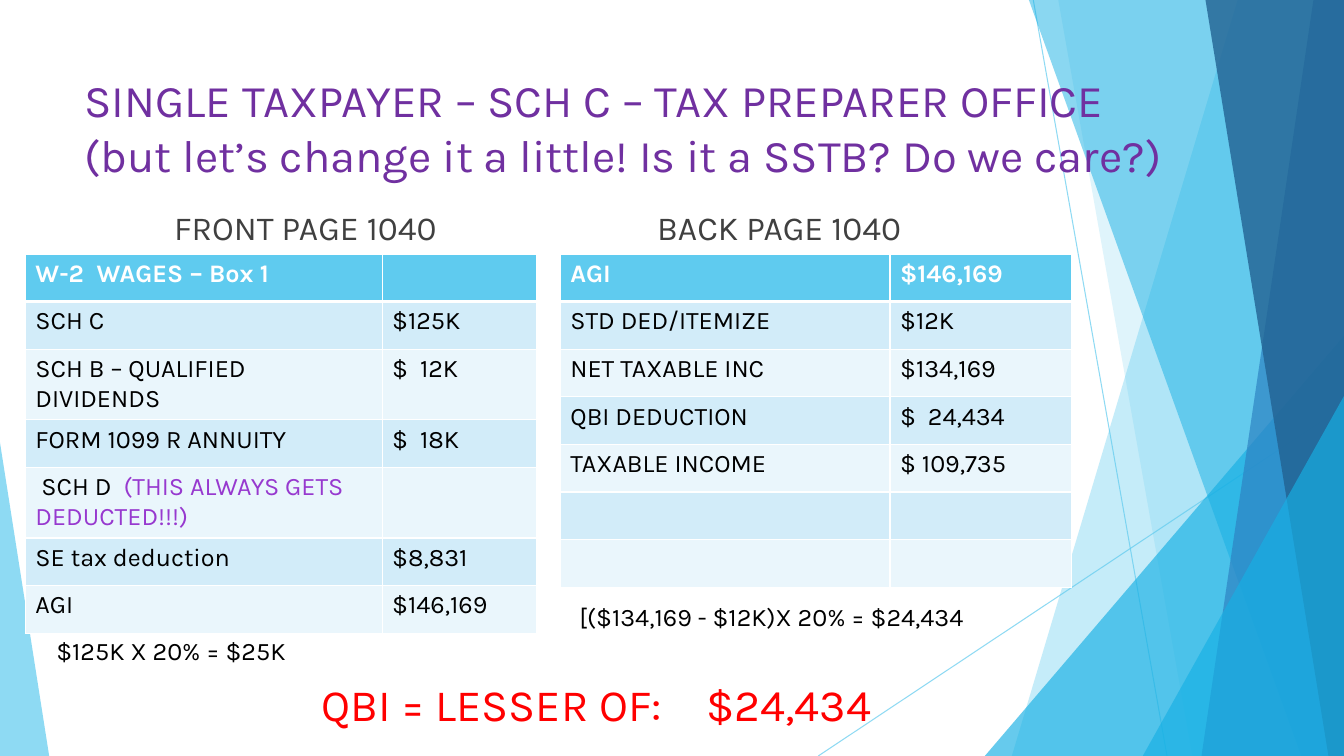
from dataclasses import dataclass

from lxml.etree import SubElement
from pptx import Presentation
from pptx.dml.color import RGBColor as RGB
from pptx.enum.shapes import MSO_CONNECTOR as CONN, MSO_SHAPE as SHAPE
from pptx.enum.text import MSO_ANCHOR as ANCHOR, PP_ALIGN as ALIGN
from pptx.oxml.ns import qn
from pptx.util import Cm, Pt


@dataclass(frozen=True)
class Theme:
    """Colours, font and type sizes of the slide."""
    font: str = "Karla"
    title: float = 32.4
    result: float = 32
    heading: float = 24
    body: float = 18
    purple: str = "7030A0"
    violet: str = "9739CF"
    red: str = "FF0000"
    grey: str = "404040"
    black: str = "000000"
    white: str = "FFFFFF"
    sky: str = "5FCBEF"
    azure: str = "17B0E4"
    blue: str = "2E83C3"
    navy: str = "226292"
    bands: tuple = ("D2ECF9", "EAF6FC")


T = Theme()
W, H = 33.87, 19.05

FRONT = [
    ("W-2  WAGES – Box 1", ""),
    ("SCH C", "$125K"),
    ("SCH B – QUALIFIED DIVIDENDS", "$  12K"),
    ("FORM 1099 R ANNUITY", "$  18K"),
    ((" SCH D  ", "(THIS ALWAYS GETS DEDUCTED!!!)"), ""),
    ("SE tax deduction", "$8,831"),
    ("AGI", "$146,169"),
]
BACK = [
    ("AGI", "$146,169"),
    ("STD DED/ITEMIZE", "$12K"),
    ("NET TAXABLE INC", "$134,169"),
    ("QBI DEDUCTION", "$  24,434"),
    ("TAXABLE INCOME", "$ 109,735"),
    ("", ""),
    ("", ""),
]


def apply(obj, **values):
    """Set each named attribute on an object."""
    for name, value in values.items():
        setattr(obj, name, value)


def add_run(p, text, size, color, bold=False):
    """Add one formatted run to a paragraph."""
    r = p.add_run()
    r.text = text
    apply(r.font, name=T.font, size=Pt(size), bold=bold)
    r.font.color.rgb = RGB.from_string(color)


def add_text(s, box, lines, size, color, frame=None, para=None):
    """Place a wrapped text box and return its paragraph."""
    tf = s.shapes.add_textbox(*map(Cm, box)).text_frame
    apply(tf, word_wrap=True, **(frame or {}))
    p = tf.paragraphs[0]
    apply(p, **(para or {}))
    for i, line in enumerate(lines):
        if i:
            p.add_line_break()
        add_run(p, line, size, color)
    return p


def set_alpha(shape, percent):
    """Make the first solid colour of a shape translucent."""
    color = next(shape._element.spPr.iter(qn("a:srgbClr")))
    SubElement(color, qn("a:alpha")).set("val", str(percent * 1000))


def paint(sp, color, alpha):
    """Give a shape a translucent fill with no line or shadow."""
    sp.shadow.inherit = False
    sp.fill.solid()
    sp.fill.fore_color.rgb = RGB.from_string(color)
    sp.line.fill.background()
    set_alpha(sp, alpha)


def ray(s, start, end):
    """Draw a thin translucent line."""
    c = s.shapes.add_connector(CONN.STRAIGHT, *map(Cm, start + end))
    c.line.color.rgb = RGB.from_string(T.sky)
    c.line.width = Pt(0.75)
    set_alpha(c, 70)
    SubElement(c._element.spPr, qn("a:effectLst"))


def panel(s, box, top_x, bottom_x, color, alpha):
    """Draw a slanted panel that reaches the right edge of the box."""
    x, y, w, h = box
    corners = [(x + top_x, y), (x + w, y), (x + w, y + h), (x + bottom_x, y + h)]
    points = [(Cm(px), Cm(py)) for px, py in corners]
    fb = s.shapes.build_freeform(*points[0])
    fb.add_line_segments(points[1:], close=True)
    paint(fb.convert_to_shape(), color, alpha)


def wedge(s, box, apex, color, alpha):
    """Draw a right triangle filling the box, its apex at 0 or 1."""
    sp = s.shapes.add_shape(SHAPE.ISOSCELES_TRIANGLE, *map(Cm, box))
    sp.adjustments[0] = apex
    paint(sp, color, alpha)


def facets(s, box):
    """Draw the faceted decoration inside the box."""
    x, y, w, h = box

    def corner(dx, dy):
        wedge(s, (x + dx, y + dy, w - dx, h - dy), 1, T.azure, 66)

    ray(s, (x + 26.04, y), (x + 29.41, y + h))
    ray(s, (x + w, y + 10.24), (x + 20.62, y + h))
    panel(s, box, 31.19, 25.5, T.sky, 36)
    panel(s, box, 26.67, 30.05, T.sky, 20)
    corner(24.82, 8.46)
    panel(s, box, 25.93, 32.79, T.azure, 50)
    panel(s, box, 33.1, 30.28, T.blue, 70)
    panel(s, box, 30.38, 33.48, T.navy, 80)
    corner(28.8, 9.98)
    wedge(s, (x, y + 11.15, 1.24, h - 11.15), 0, T.sky, 70)


def format_cell(cell, content, row):
    """Fill one table cell with its text, borders and band colour."""
    header = row == 0
    tcPr = cell._tc.get_or_add_tcPr()
    for side in "LRTB":
        thick = (side == "B" and header) or (side == "T" and row == 1)
        ln = SubElement(tcPr, qn(f"a:ln{side}"), w=str(Pt(3 if thick else 1)))
        SubElement(SubElement(ln, qn("a:solidFill")), qn("a:srgbClr"), val=T.white)
    cell.fill.solid()
    fill = T.sky if header else T.bands[(row - 1) % 2]
    cell.fill.fore_color.rgb = RGB.from_string(fill)
    p = cell.text_frame.paragraphs[0]
    p.font.size = Pt(T.body)
    parts = (content,) if isinstance(content, str) else content
    colors = (T.white if header else T.black, T.violet)
    for text, color in zip(parts, colors):
        if text:
            add_run(p, text, T.body, color, header)


def ledger(s, box, heading, heading_dx, rows, label_w, note, note_dx):
    """Place a heading, a two-column table and a closing note in the box."""
    x, y, w, h = box
    add_text(s, (x + heading_dx, y, 11.63, 1.6), [heading], T.heading, T.grey,
             {"vertical_anchor": ANCHOR.BOTTOM},
             {"alignment": ALIGN.CENTER, "space_before": Pt(10)})
    row_h = 1.2
    frame = s.shapes.add_table(len(rows), 2, Cm(x), Cm(y + 1.65), Cm(w),
                               Cm(row_h * len(rows)))
    table = frame.table
    for column, width in zip(table.columns, (label_w, w - label_w)):
        column.width = Cm(width)
    for i, row in enumerate(rows):
        table.rows[i].height = Cm(row_h)
        for j, content in enumerate(row):
            format_cell(table.cell(i, j), content, i)
    add_text(s, (x + note_dx, y + h - 1.02, 12.65, 1.02), [note], T.body, T.black)


def result(s, box):
    """Place the closing result, its amount set at a tab stop."""
    p = add_text(s, box, ["QBI = LESSER OF:\t$24,434"], T.result, T.red,
                 {"margin_left": Cm(2.05)}, {"alignment": ALIGN.LEFT})
    tabs = SubElement(p._p.get_or_add_pPr(), qn("a:tabLst"))
    SubElement(tabs, qn("a:tab"), pos=str(Cm(9.7)), algn="l")


def main():
    """Build the slide and save it."""
    prs = Presentation()
    apply(prs, slide_width=Cm(W), slide_height=Cm(H))
    s = prs.slides.add_slide(prs.slide_layouts[6])
    facets(s, (0, 0, W, H))
    add_text(s, (1.88, 1.7, 28.24, 2.62),
             ["SINGLE TAXPAYER – SCH C – TAX PREPARER OFFICE",
              "(but let’s change it a little! Is it a SSTB? Do we care?)"],
             T.title, T.purple)
    ledger(s, (0.64, 4.75, 12.88, 12.15), "FRONT PAGE 1040", 1.24,
           FRONT, 8.99, "$125K X 20% = $25K", 0.53)
    ledger(s, (14.12, 4.75, 12.88, 11.31), "BACK PAGE 1040", -0.3,
           BACK, 8.31, "[($134,169 - $12K)X 20% = $24,434", 0.23)
    result(s, (6.05, 16.92, 17.98, 1.63))
    prs.save("out.pptx")


if __name__ == "__main__":
    main()
